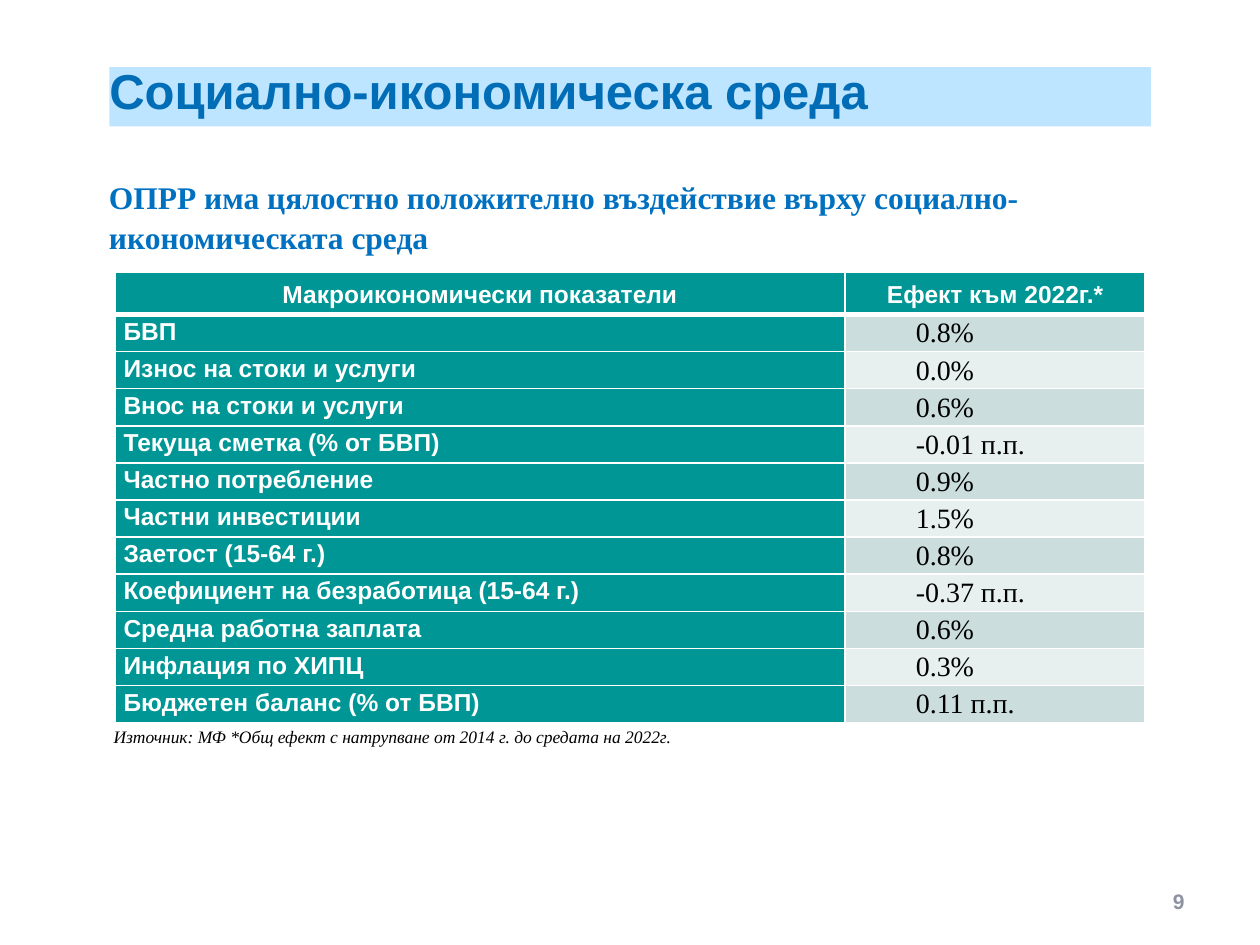
import pptx
import pptx.dml.color
import pptx.enum.text
import pptx.oxml
import pptx.oxml.ns
import pptx.util

Pt = pptx.util.Pt
ALIGN = pptx.enum.text.PP_ALIGN
ANCHOR = pptx.enum.text.MSO_ANCHOR
SANS, SERIF = "Arial", "Times New Roman"
WHITE, BLACK, TEAL = "FFFFFF", "000000", "009696"
BANDS = ("CCDDDD", "E7EFEF")
HEADER = ("Макроикономически показатели", "Ефект към 2022г.*")
INDICATORS = [
    ("БВП", "0.8%"),
    ("Износ на стоки и услуги", "0.0%"),
    ("Внос на стоки и услуги", "0.6%"),
    ("Текуща сметка (% от БВП)", "-0.01 п.п."),
    ("Частно потребление", "0.9%"),
    ("Частни инвестиции", "1.5%"),
    ("Заетост (15-64 г.)", "0.8%"),
    ("Коефициент на безработица (15-64 г.)", "-0.37 п.п."),
    ("Средна работна заплата", "0.6%"),
    ("Инфлация по ХИПЦ", "0.3%"),
    ("Бюджетен баланс (% от БВП)", "0.11 п.п."),
]


def rgb(color):
    return pptx.dml.color.RGBColor.from_string(color)


def write(tf, text, size, name, color, bold=False, italic=False, align=ALIGN.LEFT):
    p = tf.paragraphs[0]
    p.text = text
    p.alignment = align
    p.font.size = Pt(size)
    p.font.name = name
    p.font.bold = bold
    p.font.italic = italic
    p.font.color.rgb = rgb(color)
    return p


def add_title(slide, x, y, w, h, text):
    sp = slide.shapes.title
    sp.left, sp.top, sp.width, sp.height = Pt(x), Pt(y), Pt(w), Pt(h)
    sp.fill.solid()
    sp.fill.fore_color.rgb = rgb("BDE5FF")
    tf = sp.text_frame
    tf.margin_left = tf.margin_top = tf.margin_right = tf.margin_bottom = 0
    tf.vertical_anchor = ANCHOR.TOP
    tf.auto_size = pptx.enum.text.MSO_AUTO_SIZE.NONE
    p = write(tf, text, 28, SANS, "006DB6", bold=True)
    p.line_spacing = Pt(30)


def add_text(slide, x, y, w, h, text, size, name, color,
             anchor=ANCHOR.TOP, wrap=True, **style):
    tf = slide.shapes.add_textbox(Pt(x), Pt(y), Pt(w), Pt(h)).text_frame
    tf.word_wrap = wrap
    tf.vertical_anchor = anchor
    return write(tf, text, size, name, color, **style)


def set_borders(cell, top, bottom):
    tcPr = cell._tc.get_or_add_tcPr()
    sides = (("lnL", 1), ("lnR", 1), ("lnT", top), ("lnB", bottom))
    for i, (side, width) in enumerate(sides):
        tcPr.insert(i, pptx.oxml.parse_xml(
            f'<a:{side} {pptx.oxml.ns.nsdecls("a")} w="{Pt(width)}">'
            f'<a:solidFill><a:srgbClr val="{WHITE}"/></a:solidFill></a:{side}>'))


def add_indicators(slide, x, y, w, h, header_h=24):
    rows = [HEADER] + INDICATORS
    frame = slide.shapes.add_table(len(rows), 2, Pt(x), Pt(y), Pt(w), Pt(h))
    table = frame.table
    label_w = 417.4
    table.columns[0].width = Pt(label_w)
    table.columns[1].width = Pt(w - label_w)
    row_h = (h - header_h) / len(INDICATORS)
    for i, values in enumerate(rows):
        table.rows[i].height = Pt(row_h if i else header_h)
        for j, text in enumerate(values):
            cell = table.cell(i, j)
            is_value = i > 0 and j == 1
            cell.margin_left = cell.margin_right = Pt(5)
            cell.margin_top, cell.margin_bottom = Pt(2), 0
            cell.vertical_anchor = ANCHOR.TOP if i else ANCHOR.MIDDLE
            cell.fill.solid()
            cell.fill.fore_color.rgb = rgb(BANDS[(i - 1) % 2] if is_value else TEAL)
            set_borders(cell, 3 if i == 1 else 1, 1 if i else 3)
            if is_value:
                cell.margin_left = Pt(40.4)
                write(cell.text_frame, text, 16, SERIF, BLACK)
            else:
                write(cell.text_frame, text, 14, SANS, WHITE, bold=True,
                      align=ALIGN.LEFT if i else ALIGN.CENTER)


def main():
    prs = pptx.Presentation()
    prs.slide_width, prs.slide_height = Pt(720), Pt(540)
    slide = prs.slides.add_slide(prs.slide_layouts[5])
    add_title(slide, 62.5, 38.3, 595.2, 34, "Социално-икономическа среда")
    p = add_text(slide, 55.2, 97.2, 602.6, 51.1,
                 "ОПРР има цялостно положително въздействие върху социално-икономическата среда",
                 18, SERIF, "0070C0", bold=True)
    p.line_spacing = 1.05
    add_indicators(slide, 65.6, 155.7, 588.8, 249.3)
    add_text(slide, 57.8, 411.4, 337, 19.4,
             "Източник: МФ *Общ ефект с натрупване от 2014 г. до средата на 2022г.",
             10, SERIF, BLACK, anchor=ANCHOR.MIDDLE, wrap=False, italic=True)
    add_text(slide, 516, 500.5, 168, 28.8, "9", 12, SANS, "8C929F",
             anchor=ANCHOR.MIDDLE, bold=True, align=ALIGN.RIGHT)
    prs.save("out.pptx")


if __name__ == "__main__":
    main()
